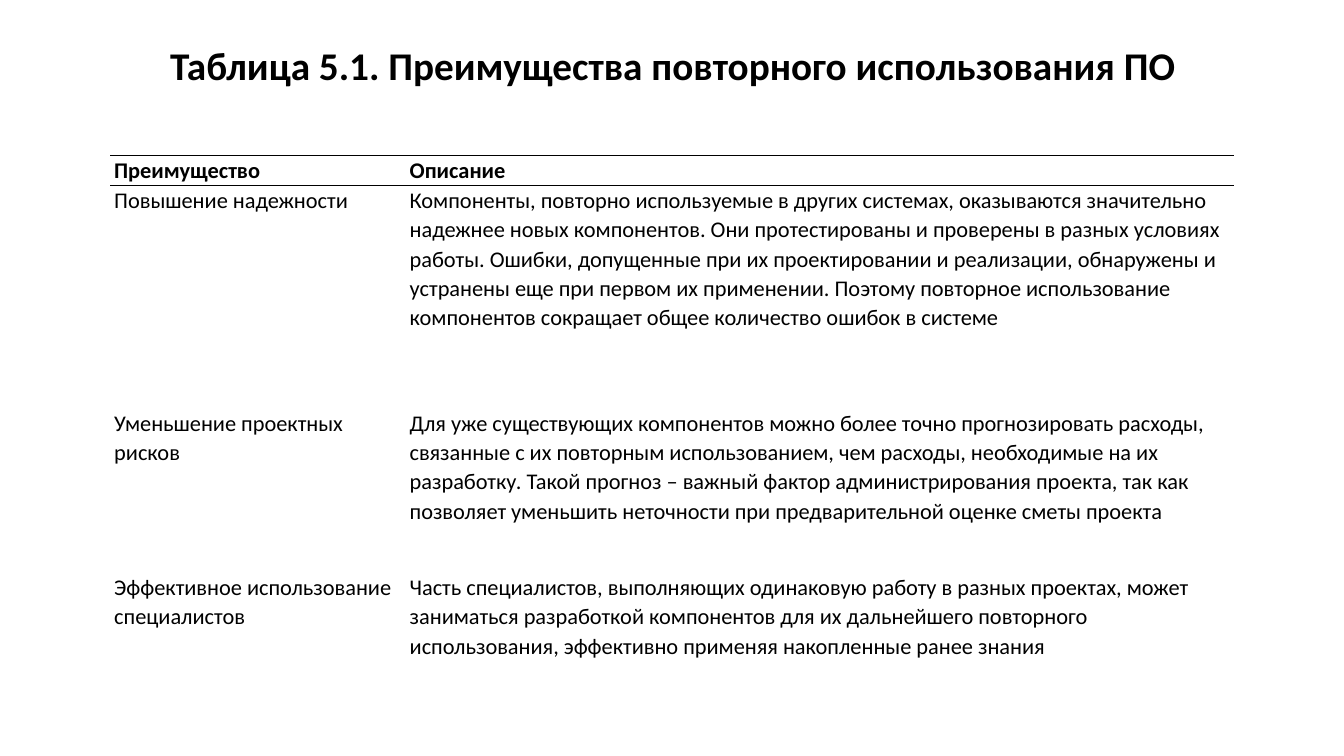
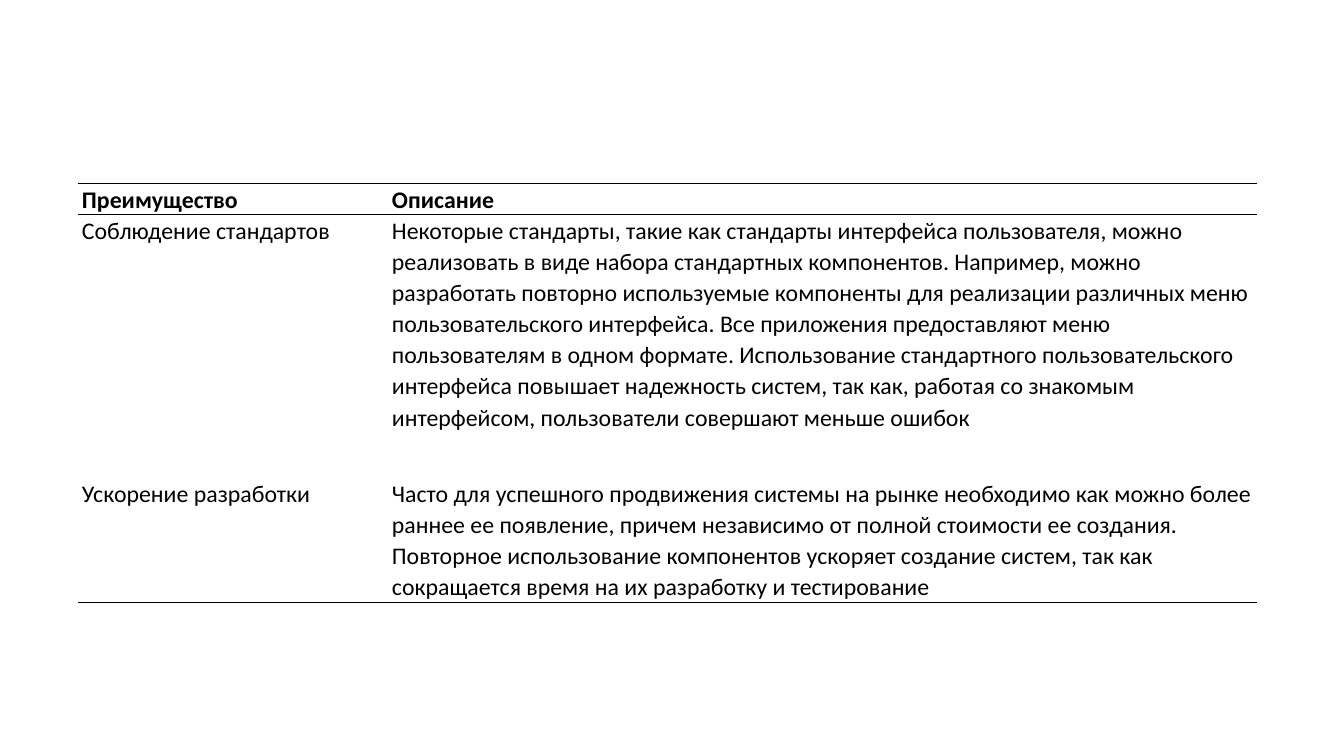
from dataclasses import dataclass

from lxml.etree import SubElement
from pptx import Presentation
from pptx.dml.color import RGBColor
from pptx.enum.text import MSO_ANCHOR, MSO_AUTO_SIZE, PP_ALIGN
from pptx.oxml.ns import qn
from pptx.util import Inches, Pt

TITLE_ONLY, BLANK = 5, 6
HEADINGS = ("Преимущество", "Описание")


@dataclass(frozen=True)
class Theme:
    font: str = "Calibri"
    ink: RGBColor = RGBColor(0x00, 0x00, 0x00)
    paper: RGBColor = RGBColor(0xFF, 0xFF, 0xFF)
    title_size: int = 28
    title_spacing: float = 0.9
    cell_spacing: float = 1.07
    space_after: int = 8
    cell_margin: float = 0.04
    rule_width: int = 1
    label_share: float = 26.3
    plain_table_style: str = "{2D5ABB26-0587-4C30-8999-92F81FD0307C}"


class Deck:
    """Slides in one style; positions and sizes are percentages of the slide."""

    def __init__(self, theme):
        self.theme = theme
        self.presentation = Presentation()
        self.presentation.slide_width = Inches(13.33)
        self.presentation.slide_height = Inches(7.5)
        self.page = None

    def across(self, percent):
        return round(self.presentation.slide_width * percent / 100)

    def down(self, percent):
        return round(self.presentation.slide_height * percent / 100)

    def add_page(self, layout):
        self.page = self.presentation.slides.add_slide(
            self.presentation.slide_layouts[layout])

    def style_font(self, para, size, bold):
        font = para.font
        font.name, font.size, font.bold = self.theme.font, Pt(size), bold
        font.color.rgb = self.theme.ink

    def title(self, text):
        box = self.page.shapes.title
        box.left, box.top = self.across(6.9), self.down(5.5)
        box.width, box.height = self.across(86.25), self.down(7.5)
        frame = box.text_frame
        frame.text = text
        frame.auto_size = MSO_AUTO_SIZE.NONE
        frame.vertical_anchor = MSO_ANCHOR.TOP
        para = frame.paragraphs[0]
        para.alignment = PP_ALIGN.CENTER
        para.line_spacing = self.theme.title_spacing
        self.style_font(para, self.theme.title_size, True)

    def table(self, left, top, width, heights, rows, size, bold_rows=(), ruled=None):
        """Add a two-column table; ruled maps a row number to its sides, T or B."""
        frame = self.page.shapes.add_table(
            len(rows), 2, self.across(left), self.down(top),
            self.across(width), self.down(sum(heights)))
        table = frame.table
        table.first_row = table.horz_banding = False
        style = table._tbl.tblPr.find(qn("a:tableStyleId"))
        style.text = self.theme.plain_table_style
        label_width = width * self.theme.label_share / 100
        for column, share in zip(table.columns, (label_width, width - label_width)):
            column.width = self.across(share)
        for number, (height, texts) in enumerate(zip(heights, rows)):
            table.rows[number].height = self.down(height)
            for cell, text in zip(table.rows[number].cells, texts):
                self.fill_cell(cell, text, size, number in bold_rows)
                for side in (ruled or {}).get(number, ""):
                    self.rule(cell, side)
                cell.fill.solid()
                cell.fill.fore_color.rgb = self.theme.paper

    def fill_cell(self, cell, text, size, bold):
        cell.text = text
        cell.margin_left = cell.margin_right = Inches(self.theme.cell_margin)
        cell.margin_top = cell.margin_bottom = 0
        para = cell.text_frame.paragraphs[0]
        para.line_spacing = self.theme.cell_spacing
        para.space_after = Pt(self.theme.space_after)
        self.style_font(para, size, bold)

    def rule(self, cell, side):
        properties = cell._tc.get_or_add_tcPr()
        line = SubElement(properties, qn(f"a:ln{side}"), w=str(Pt(self.theme.rule_width)))
        fill = SubElement(line, qn("a:solidFill"))
        SubElement(fill, qn("a:srgbClr"), val=str(self.theme.ink))

    def save(self):
        self.presentation.save("out.pptx")


def add_first_advantages(deck):
    deck.add_page(TITLE_ONLY)
    deck.title("Таблица 5.1. Преимущества повторного использования ПО")
    rows = [
        HEADINGS,
        ("Повышение надежности",
         "Компоненты, повторно используемые в других системах, оказываются "
         "значительно надежнее новых компонентов. Они протестированы и проверены "
         "в разных условиях работы. Ошибки, допущенные при их проектировании и "
         "реализации, обнаружены и устранены еще при первом их применении. "
         "Поэтому повторное использование компонентов сокращает общее "
         "количество ошибок в системе"),
        ("Уменьшение проектных рисков",
         "Для уже существующих компонентов можно более точно прогнозировать "
         "расходы, связанные с их повторным использованием, чем расходы, "
         "необходимые на их разработку. Такой прогноз – важный фактор "
         "администрирования проекта, так как позволяет уменьшить неточности "
         "при предварительной оценке сметы проекта"),
        ("Эффективное использование специалистов",
         "Часть специалистов, выполняющих одинаковую работу в разных проектах, "
         "может заниматься разработкой компонентов для их дальнейшего повторного "
         "использования, эффективно применяя накопленные ранее знания"),
    ]
    deck.table(8.2, 20.6, 83.6, (3.9, 29.5, 21.7, 17.9), rows, size=16,
               bold_rows=(0,), ruled={0: "TB"})


def add_further_advantages(deck):
    deck.add_page(BLANK)
    left, top, width, heading_height, size = 5.8, 24.3, 87.7, 4.1, 17
    rows = [
        ("Соблюдение стандартов",
         "Некоторые стандарты, такие как стандарты интерфейса пользователя, можно "
         "реализовать в виде набора стандартных компонентов. Например, можно "
         "разработать повторно используемые компоненты для реализации различных "
         "меню пользовательского интерфейса. Все приложения предоставляют меню "
         "пользователям в одном формате. Использование стандартного "
         "пользовательского интерфейса повышает надежность систем, так как, "
         "работая со знакомым интерфейсом, пользователи совершают меньше ошибок"),
        ("Ускорение разработки",
         "Часто для успешного продвижения системы на рынке необходимо как можно "
         "более раннее ее появление, причем независимо от полной стоимости ее "
         "создания. Повторное использование компонентов ускоряет создание систем, "
         "так как сокращается время на их разработку и тестирование"),
    ]
    deck.table(left, top + heading_height, width, (34.8, 16.2), rows, size,
               ruled={1: "B"})
    deck.table(left, top, width, (heading_height,), [HEADINGS], size,
               bold_rows=(0,), ruled={0: "TB"})


def main():
    deck = Deck(Theme())
    add_first_advantages(deck)
    add_further_advantages(deck)
    deck.save()


if __name__ == "__main__":
    main()
